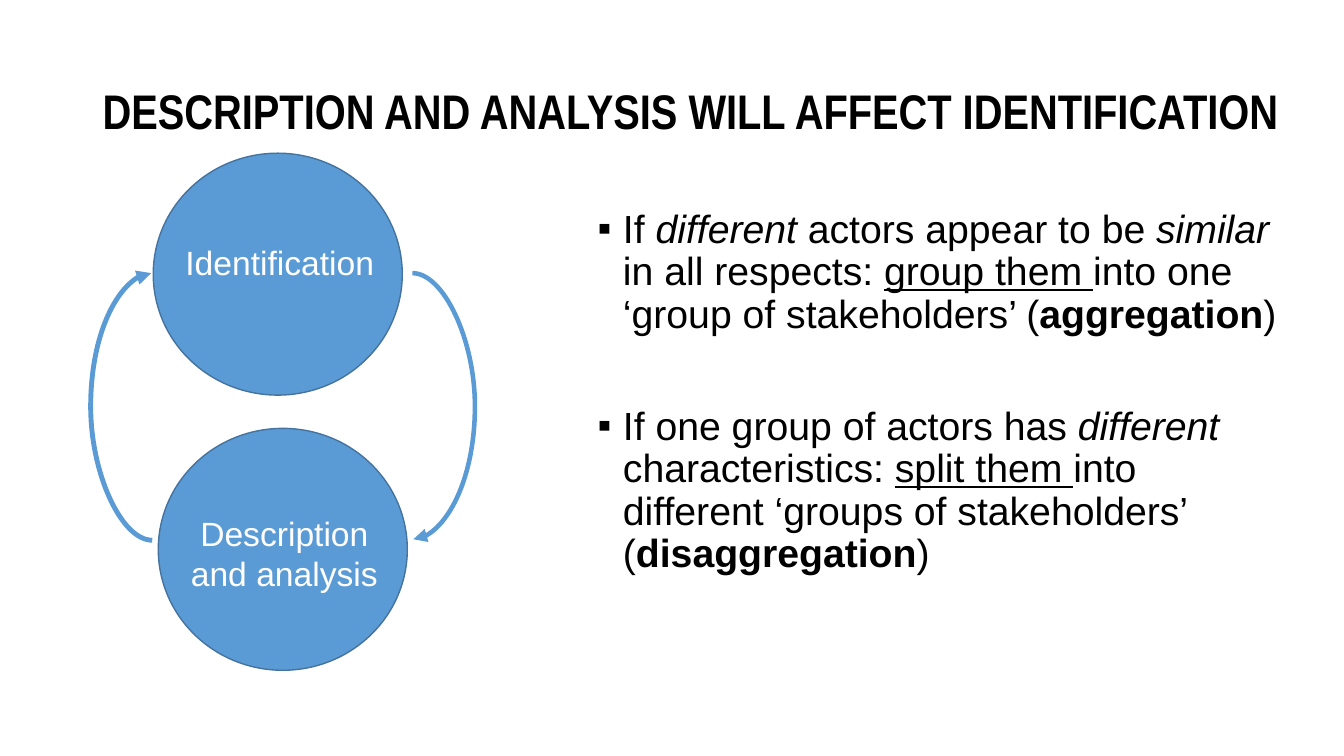
from dataclasses import dataclass

from lxml import etree
from pptx import Presentation
from pptx.dml.color import RGBColor
from pptx.enum.shapes import MSO_CONNECTOR, MSO_SHAPE
from pptx.enum.text import MSO_ANCHOR, PP_ALIGN
from pptx.oxml import parse_xml
from pptx.oxml.ns import nsdecls, qn
from pptx.slide import Slide
from pptx.text.text import TextFrame
from pptx.util import Inches, Pt

CURVE = MSO_CONNECTOR.CURVE
OVAL = MSO_SHAPE.OVAL
MIDDLE = MSO_ANCHOR.MIDDLE
CENTER = PP_ALIGN.CENTER

BLUE = "5B9BD5"
OUTLINE = "43739E"
BLACK = "000000"
WHITE = "FFFFFF"
CIRCLE_SIZE = (2.47, 2.4)


@dataclass(frozen=True)
class Box:
    left: float
    top: float
    width: float
    height: float


@dataclass(frozen=True)
class Stage:
    label: str
    circle_left: float
    circle_top: float
    label_box: Box


@dataclass(frozen=True)
class Arc:
    start: tuple[float, float]
    end: tuple[float, float]
    bulge: float
    weight: float


@dataclass(frozen=True)
class Piece:
    text: str
    style: str = ""


@dataclass(frozen=True)
class Bullet:
    pieces: tuple[Piece, ...]
    space_before: float


TITLE = "DESCRIPTION AND ANALYSIS WILL AFFECT IDENTIFICATION"
STAGES = (
    Stage("Description and analysis", 1.57, 4.25, Box(1.59, 5.04, 2.46, 0.91)),
    Stage("Identification", 1.52, 1.52, Box(1.49, 2.35, 2.57, 0.5)),
)
ARCS = (
    Arc((4.09, 2.71), (4.1, 5.35), 0.63, 3.25),
    Arc((1.51, 5.36), (1.5, 2.71), 0.62, 3.5),
)
BULLETS = (
    Bullet((
        Piece("If "),
        Piece("different", "italic"),
        Piece(" actors appear to be "),
        Piece("similar", "italic"),
        Piece(" in all respects: "),
        Piece("group them ", "underline"),
        Piece("into one ‘group of stakeholders’ ("),
        Piece("aggregation", "bold"),
        Piece(")"),
    ), 0),
    Bullet((
        Piece("If one group of actors has "),
        Piece("different", "italic"),
        Piece(" characteristics: "),
        Piece("split them ", "underline"),
        Piece("into different ‘groups of stakeholders’ ("),
        Piece("disaggregation", "bold"),
        Piece(")"),
    ), 50),
)


def color(value: str) -> RGBColor:
    return RGBColor.from_string(value)


def set_font(font, name: str, size: float, value: str) -> None:
    font.name = name
    font.size = Pt(size)
    font.color.rgb = color(value)


def add_text_frame(slide: Slide, box: Box) -> TextFrame:
    shape = slide.shapes.add_textbox(
        Inches(box.left), Inches(box.top), Inches(box.width), Inches(box.height))
    shape.text_frame.word_wrap = True
    return shape.text_frame


def add_title(slide: Slide) -> None:
    frame = add_text_frame(slide, Box(0.92, 0.4, 11.94, 1.45))
    frame.vertical_anchor = MIDDLE
    paragraph = frame.paragraphs[0]
    paragraph.text = TITLE
    paragraph.line_spacing = 0.9
    set_font(paragraph.font, "Arial Narrow", 34.7, BLACK)
    paragraph.font.bold = True


def add_bullets(slide: Slide) -> None:
    frame = add_text_frame(slide, Box(5.83, 2.03, 7.02, 4.76))
    for index, bullet in enumerate(BULLETS):
        paragraph = frame.add_paragraph() if index else frame.paragraphs[0]
        paragraph.line_spacing = 0.9
        paragraph.space_before = Pt(bullet.space_before)
        properties = paragraph._p.get_or_add_pPr()
        properties.set("marL", str(Inches(0.25)))
        properties.set("indent", str(Inches(-0.25)))
        etree.SubElement(properties, qn("a:buFont")).set("typeface", "Arial")
        etree.SubElement(properties, qn("a:buChar")).set("char", "▪")
        set_font(paragraph.font, "Arial", 28, BLACK)
        for piece in bullet.pieces:
            run = paragraph.add_run()
            run.text = piece.text
            if piece.style:
                setattr(run.font, piece.style, True)


def add_stage(slide: Slide, stage: Stage) -> None:
    width, height = CIRCLE_SIZE
    circle = slide.shapes.add_shape(
        OVAL, Inches(stage.circle_left), Inches(stage.circle_top),
        Inches(width), Inches(height))
    circle.shadow.inherit = False
    circle.fill.solid()
    circle.fill.fore_color.rgb = color(BLUE)
    circle.line.color.rgb = color(OUTLINE)
    circle.line.width = Pt(1)
    paragraph = add_text_frame(slide, stage.label_box).paragraphs[0]
    paragraph.text = stage.label
    paragraph.alignment = CENTER
    set_font(paragraph.font, "Arial", 24, WHITE)


def add_arc(slide: Slide, arc: Arc) -> None:
    """Draw a curved arrow whose side reaches out by the arc's bulge."""
    connector = slide.shapes.add_connector(
        CURVE, *(Inches(value) for value in arc.start + arc.end))
    connector.line.color.rgb = color(BLUE)
    connector.line.width = Pt(arc.weight)
    properties = connector._element.spPr
    ratio = round(arc.bulge / abs(arc.end[0] - arc.start[0]) * 100000)
    geometry = properties.find(qn("a:prstGeom"))
    for child in list(geometry):
        geometry.remove(child)
    geometry.append(parse_xml(
        f'<a:avLst {nsdecls("a")}><a:gd name="adj1" fmla="val {ratio}"/></a:avLst>'))
    line = properties.find(qn("a:ln"))
    etree.SubElement(line, qn("a:tailEnd")).set("type", "triangle")
    etree.SubElement(properties, qn("a:effectLst"))


def main() -> None:
    presentation = Presentation()
    presentation.slide_width = Inches(13.33)
    presentation.slide_height = Inches(7.5)
    slide = presentation.slides.add_slide(presentation.slide_layouts[6])
    add_title(slide)
    add_bullets(slide)
    for arc in ARCS:
        add_arc(slide, arc)
    for stage in STAGES:
        add_stage(slide, stage)
    presentation.save("out.pptx")


if __name__ == "__main__":
    main()
